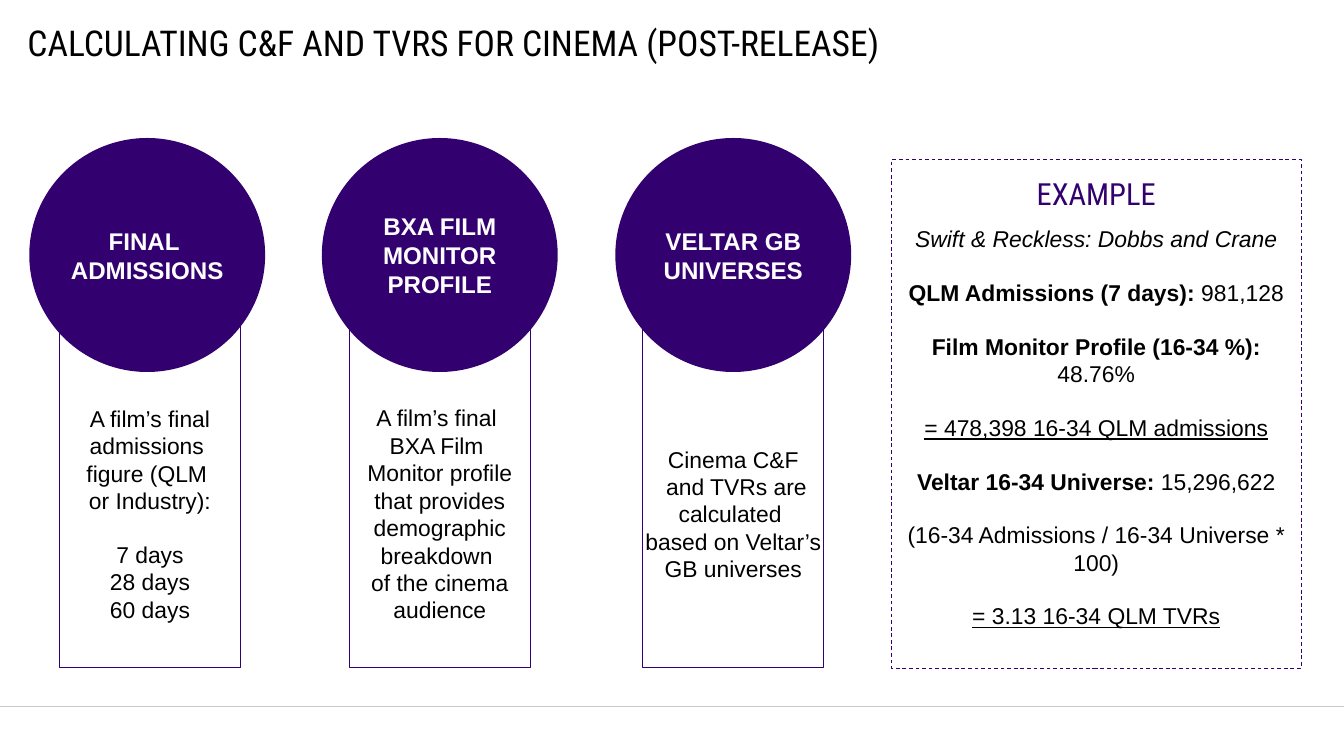
from pptx import Presentation
from pptx.dml.color import RGBColor
from pptx.enum.dml import MSO_LINE_DASH_STYLE as DASH
from pptx.enum.shapes import MSO_CONNECTOR, MSO_SHAPE as SHAPE
from pptx.enum.text import MSO_ANCHOR, MSO_AUTO_SIZE, PP_ALIGN as ALIGN
from pptx.oxml.ns import qn
from pptx.util import Pt
from lxml.etree import SubElement

PX = 9144  # 100 px to the inch
WIDTH, HEIGHT = 1470, 827
PURPLE, BLACK, WHITE, GREY = "33006F", "000000", "FFFFFF", "CAC8C8"
BODY, DISPLAY = "Arial", "Roboto Condensed"
BODY_LINE = 20.7  # height of one 18 pt line, in points

TITLE = "CALCULATING C&F AND TVRS FOR CINEMA (POST-RELEASE)"

# Column left, circle lines, groups of column lines
STEPS = [
    (65, ["FINAL ", "ADMISSIONS"],
     [["A film’s final admissions ", "figure (QLM ", "or Industry):"],
      ["7 days", "28 days", "60 days"]]),
    (382, ["BXA FILM MONITOR PROFILE"],
     [["A film’s final ", "BXA Film ",
       "Monitor profile that provides demographic breakdown ",
       "of the cinema audience"]]),
    (703, ["VELTAR GB UNIVERSES"],
     [["Cinema C&F", " and TVRs are calculated ",
       "based on Veltar’s GB universes"]]),
]

# Each paragraph is a list of (text, style) runs: b bold, i italic, u underlined
EXAMPLE_HEAD = "EXAMPLE"
EXAMPLE = [
    [("Swift & Reckless: Dobbs and Crane", "i")],
    [("QLM Admissions (7 days): ", "b"), ("981,128", "")],
    [("Film Monitor Profile (16-34 %): ", "b"), ("48.76%", "")],
    [("= 478,398 16-34 QLM admissions", "u")],
    [("Veltar 16-34 Universe: ", "b"), ("15,296,622", "")],
    [("(16-34 Admissions / 16-34 Universe * 100)", "")],
    [("= 3.13 16-34 QLM TVRs", "u")],
]


def rgb(color):
    return RGBColor.from_string(color)


def emu(*lengths):
    return [n * PX for n in lengths]


def write(sp, paragraphs, size, color, font=BODY, align=ALIGN.CENTER, top=0):
    """Fill a shape with (space before, runs) paragraphs; top is the inset in px."""
    tf = sp.text_frame
    tf.word_wrap = True
    tf.auto_size = MSO_AUTO_SIZE.NONE
    tf.vertical_anchor = MSO_ANCHOR.MIDDLE
    tf.margin_left = tf.margin_right = tf.margin_bottom = 0
    tf.margin_top = top * PX
    for i, (gap, runs) in enumerate(paragraphs):
        p = tf.add_paragraph() if i else tf.paragraphs[0]
        p.alignment = align
        p.space_before = Pt(gap)
        for text, style in runs:
            r = p.add_run()
            r.text = text
            r.font.name, r.font.size = font, Pt(size)
            r.font.color.rgb = rgb(color)
            r.font.bold, r.font.italic = "b" in style, "i" in style
            r.font.underline = "u" in style


def add_frame(slide, box, dash=None):
    sp = slide.shapes.add_shape(SHAPE.RECTANGLE, *emu(*box))
    sp.shadow.inherit = False
    sp.fill.background()
    sp.line.color.rgb = rgb(PURPLE)
    sp.line.width = Pt(0.75)
    if dash:
        sp.line.dash_style = dash
    return sp


def add_circle(slide, box, lines):
    sp = slide.shapes.add_shape(SHAPE.OVAL, *emu(*box))
    sp.shadow.inherit = False
    sp.fill.solid()
    sp.fill.fore_color.rgb = rgb(PURPLE)
    sp.line.fill.background()
    write(sp, [(0, [(line, "b")]) for line in lines], 19, WHITE)


def add_rule(slide, y):
    line = slide.shapes.add_connector(MSO_CONNECTOR.STRAIGHT, *emu(0, y, WIDTH, y))
    line.line.color.rgb = rgb(GREY)
    line.line.width = Pt(0.5)
    SubElement(line._element.spPr, qn("a:effectLst"))


def main():
    prs = Presentation()
    prs.slide_width, prs.slide_height = emu(WIDTH, HEIGHT)
    slide = prs.slides.add_slide(prs.slide_layouts[5])

    title = slide.shapes.title
    title.left, title.top, title.width, title.height = emu(30, 30, 1358, 32)
    write(title, [(0, [(TITLE, "")])], 28, BLACK, DISPLAY, ALIGN.LEFT)
    add_rule(slide, 773)

    for i, (left, heading, groups) in enumerate(STEPS):
        column = add_frame(slide, (left, 308, 198, 422))
        lines = [(BODY_LINE if g and not n else 0, [(text, "")])
                 for g, group in enumerate(groups) for n, text in enumerate(group)]
        write(column, lines, 18, BLACK, top=86)
        add_circle(slide, (32 + 641 * i // 2, 151, 258, 256), heading)

    example = add_frame(slide, (975, 175, 448, 556), DASH.DASH)
    write(example, [(BODY_LINE if i else 0, runs) for i, runs in enumerate(EXAMPLE)],
          18, BLACK, top=29)
    head = slide.shapes.add_textbox(*emu(975, 185, 448, 54))
    write(head, [(0, [(EXAMPLE_HEAD, "")])], 24, PURPLE, DISPLAY)

    prs.save("out.pptx")


if __name__ == "__main__":
    main()
